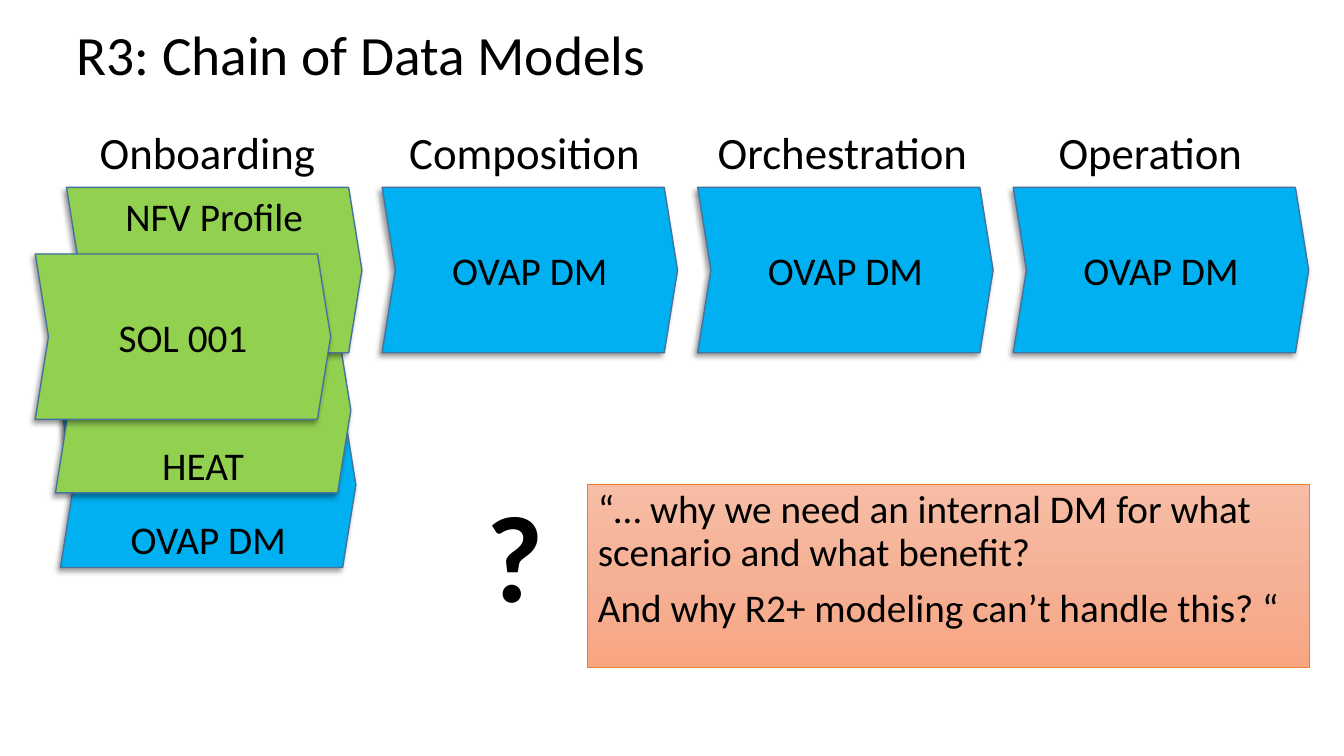
from copy import deepcopy
from dataclasses import dataclass

from lxml.etree import SubElement
from pptx import Presentation
from pptx.dml.color import RGBColor
from pptx.enum.shapes import MSO_SHAPE as Preset
from pptx.enum.text import MSO_ANCHOR as Anchor, MSO_AUTO_SIZE as AutoSize, PP_ALIGN as Align
from pptx.oxml.ns import qn
from pptx.shapes.base import BaseShape
from pptx.slide import Slide
from pptx.text.text import TextFrame
from pptx.util import Pt

PX = 9144  # EMU; 100 px to the inch
COLORS = {
    "text": "000000",
    "internal": "00B0F0",
    "external": "92D050",
    "chevron_line": "43739E",
    "quote_line": "ED7D31",
    "shadow": "000000",
}
QUOTE_GRADIENT = [(0, "F7BDA5"), (0.5, "F5B196"), (1, "F8A582")]
FONT = "Calibri"

STAGE_LEFT, STAGE_TOP, STAGE_PITCH = 66, 186, 313
CHEVRON_WIDTH, CHEVRON_HEIGHT = 293, 164


@dataclass
class Model:
    label: str
    left: int
    top: int
    color: str
    anchor: Anchor = Anchor.MIDDLE


@dataclass
class Heading:
    label: str
    left: int
    width: int


INTERNAL_MODEL = "OVAP DM"
MODELS = [
    Model(INTERNAL_MODEL, 60, 399, "internal", Anchor.BOTTOM),
    *[Model(INTERNAL_MODEL, STAGE_LEFT + stage * STAGE_PITCH, STAGE_TOP, "internal")
      for stage in range(1, 4)],
    Model("HEAT", 55, 325, "external", Anchor.BOTTOM),
    Model("NFV Profile", STAGE_LEFT, STAGE_TOP, "external", Anchor.TOP),
    Model("SOL 001", 35, 252, "external"),
]
HEADINGS = [
    Heading("Onboarding", 89, 236),
    Heading("Composition", 396, 252),
    Heading("Orchestration", 702, 270),
    Heading("Operation", 1040, 205),
]
QUOTE = [
    "“… why we need an internal DM for what scenario and what benefit?",
    "And why R2+ modeling can’t handle this? “",
]


def rgb(name: str) -> RGBColor:
    return RGBColor.from_string(COLORS[name])


def box(left: int, top: int, width: int, height: int) -> tuple[int, int, int, int]:
    return left * PX, top * PX, width * PX, height * PX


def place(shape: BaseShape, left: int, top: int, width: int, height: int) -> None:
    shape.left, shape.top, shape.width, shape.height = box(left, top, width, height)


def write(frame: TextFrame, *lines: str, size: float, bold: bool = False,
          align: Align = Align.LEFT, anchor: Anchor = Anchor.TOP, wrap: bool = True,
          auto_size: AutoSize = AutoSize.NONE, line_spacing: float = 1,
          space_before: float = 0) -> None:
    frame.word_wrap = wrap
    frame.auto_size = auto_size
    frame.vertical_anchor = anchor
    for index, line in enumerate(lines):
        paragraph = frame.add_paragraph() if index else frame.paragraphs[0]
        paragraph.alignment = align
        paragraph.line_spacing = line_spacing
        paragraph.space_before = Pt(space_before)
        run = paragraph.add_run()
        run.text = line
        run.font.name, run.font.size, run.font.bold = FONT, Pt(size), bold
        run.font.color.rgb = rgb("text")


def add_shadow(shape: BaseShape) -> None:
    shape.shadow.inherit = False
    effects = shape.element.spPr.find(qn("a:effectLst"))
    shadow = SubElement(effects, qn("a:outerShdw"), blurRad=str(Pt(4)), dist=str(Pt(3)),
                        dir=str(135 * 60000), algn="tr", rotWithShape="0")
    color = SubElement(shadow, qn("a:srgbClr"), val=COLORS["shadow"])
    SubElement(color, qn("a:alpha"), val="40000")


def add_model(slide: Slide, model: Model) -> None:
    chevron = slide.shapes.add_shape(
        Preset.CHEVRON, *box(model.left, model.top, CHEVRON_WIDTH, CHEVRON_HEIGHT))
    chevron.adjustments[0] = 0.08
    chevron.fill.solid()
    chevron.fill.fore_color.rgb = rgb(model.color)
    chevron.line.color.rgb = rgb("chevron_line")
    chevron.line.width = Pt(1)
    add_shadow(chevron)
    write(chevron.text_frame, model.label, size=28, align=Align.CENTER, anchor=model.anchor)


def add_label(slide: Slide, label: str, left: int, top: int, width: int, height: int,
              size: float, bold: bool = False, wrap: bool = False) -> None:
    text_box = slide.shapes.add_textbox(*box(left, top, width, height))
    write(text_box.text_frame, label, size=size, bold=bold, wrap=wrap,
          auto_size=AutoSize.SHAPE_TO_FIT_TEXT)


def fill_quote(quote: BaseShape) -> None:
    """Give the quote its three-stop vertical gradient and thin outline."""
    quote.fill.gradient()
    quote.fill.gradient_angle = 270
    stop_list = quote.element.spPr.find(qn("a:gradFill")).find(qn("a:gsLst"))
    stop_list.append(deepcopy(stop_list[-1]))
    for stop, (position, color) in zip(quote.fill.gradient_stops, QUOTE_GRADIENT):
        stop.position = position
        stop.color.rgb = RGBColor.from_string(color)
    quote.line.color.rgb = rgb("quote_line")
    quote.line.width = Pt(0.5)


def remove_bullets(frame: TextFrame) -> None:
    for paragraph in frame.paragraphs:
        properties = paragraph._p.get_or_add_pPr()
        properties.set("marL", "0")
        properties.set("indent", "0")
        SubElement(properties, qn("a:buNone"))


def main() -> None:
    deck = Presentation()
    deck.slide_width, deck.slide_height = 1333 * PX, 750 * PX
    slide = deck.slides.add_slide(deck.slide_layouts[1])
    title, quote = slide.placeholders

    place(title, 66, 27, 1150, 61)
    write(title.text_frame, "R3: Chain of Data Models", size=39.6,
          anchor=Anchor.MIDDLE, line_spacing=0.9)

    place(quote, 583, 481, 716, 181)
    fill_quote(quote)
    write(quote.text_frame, *QUOTE, size=28, line_spacing=0.9, space_before=10)
    remove_bullets(quote.text_frame)

    for model in MODELS:
        add_model(slide, model)
    for heading in HEADINGS:
        add_label(slide, heading.label, heading.left, 119, heading.width, 64, size=32)
    add_label(slide, "?", 473, 471, 76, 158, size=88, bold=True, wrap=True)

    deck.save("out.pptx")


if __name__ == "__main__":
    main()
